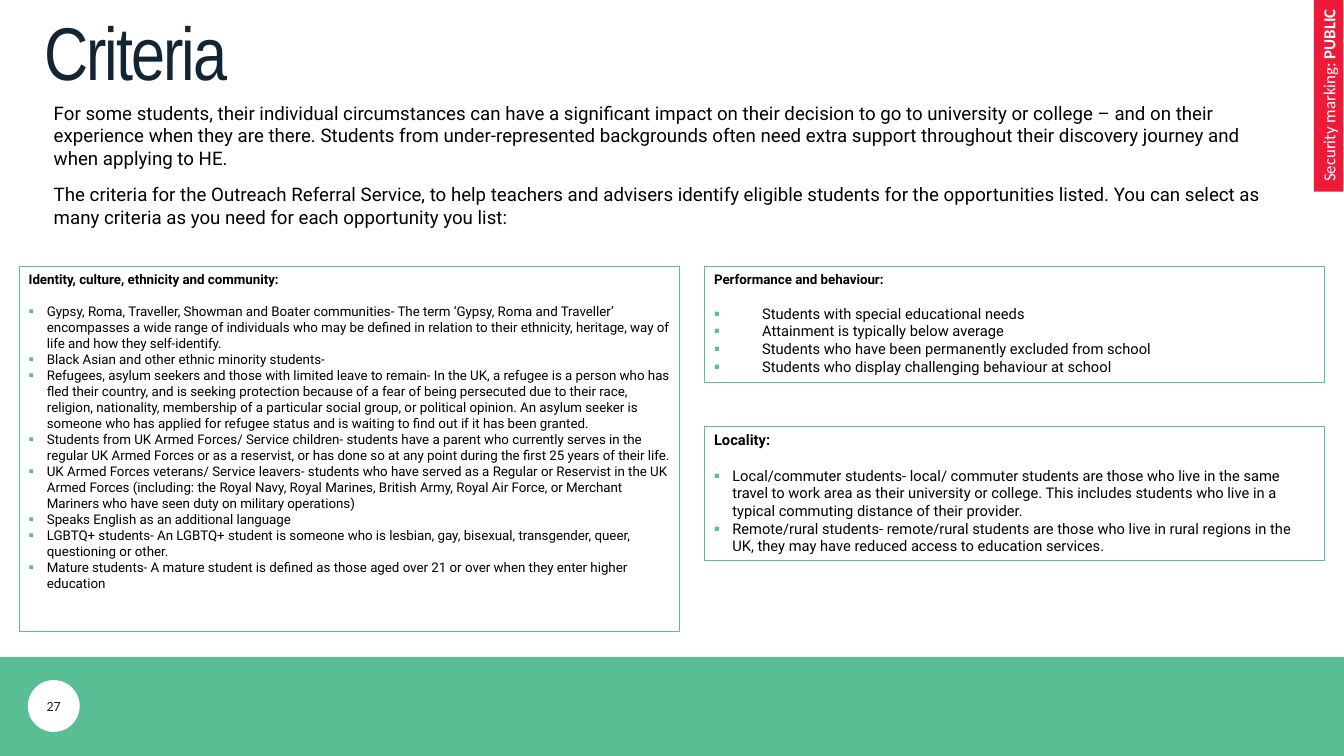
from lxml.etree import SubElement
from pptx import Presentation
from pptx.dml.color import RGBColor
from pptx.enum.shapes import MSO_SHAPE
from pptx.enum.text import MSO_ANCHOR, MSO_AUTO_SIZE, PP_ALIGN
from pptx.oxml.ns import qn
from pptx.util import Inches, Pt

GREEN, RED, NAVY, WHITE, BLACK = "57BF93", "ED1A3A", "132433", "FFFFFF", "000000"

INTRO = [
    "For some students, their individual circumstances can have a significant impact on their decision to go to "
    "university or college – and on their experience when they are there. Students from under-represented "
    "backgrounds often need extra support throughout their discovery journey and when applying to HE.",
    "The criteria for the Outreach Referral Service, to help teachers and advisers identify eligible students for "
    "the opportunities listed. You can select as many criteria as you need for each opportunity you list:",
]
IDENTITY = [
    "Gypsy, Roma, Traveller, Showman and Boater communities- The term ‘Gypsy, Roma and Traveller’ encompasses a "
    "wide range of individuals who may be defined in relation to their ethnicity, heritage, way of life and how "
    "they self-identify.",
    "Black Asian and other ethnic minority students-",
    "Refugees, asylum seekers and those with limited leave to remain- In the UK, a refugee is a person who has fled "
    "their country, and is seeking protection because of a fear of being persecuted due to their race, religion, "
    "nationality, membership of a particular social group, or political opinion. An asylum seeker is someone who "
    "has applied for refugee status and is waiting to find out if it has been granted.",
    "Students from UK Armed Forces/ Service children- students have a parent who currently serves in the regular UK "
    "Armed Forces or as a reservist, or has done so at any point during the first 25 years of their life.",
    "UK Armed Forces veterans/ Service leavers- students who have served as a Regular or Reservist in the UK Armed "
    "Forces (including: the Royal Navy, Royal Marines, British Army, Royal Air Force, or Merchant Mariners who have "
    "seen duty on military operations)",
    "Speaks English as an additional language",
    "LGBTQ+ students- An LGBTQ+ student is someone who is lesbian, gay, bisexual, transgender, queer, questioning "
    "or other.",
    "Mature students- A mature student is defined as those aged over 21 or over when they enter higher education",
]
PERFORMANCE = [
    "Students with special educational needs",
    "Attainment is typically below average",
    "Students who have been permanently excluded from school",
    "Students who display challenging behaviour at school",
]
LOCALITY = [
    "Local/commuter students- local/ commuter students are those who live in the same travel to work area as their "
    "university or college. This includes students who live in a typical commuting distance of their provider.",
    "Remote/rural students- remote/rural students are those who live in rural regions in the UK, they may have "
    "reduced access to education services.",
]


def color(value):
    return RGBColor.from_string(value)


def place(shape, left, top, width, height):
    shape.left, shape.top = Inches(left), Inches(top)
    shape.width, shape.height = Inches(width), Inches(height)


def set_margins(frame, margin):
    frame.margin_left = frame.margin_right = Inches(margin)
    frame.margin_top = frame.margin_bottom = Inches(margin)


def add_run(paragraph, text, size, font="Roboto", text_color=BLACK, bold=False):
    run = paragraph.add_run()
    run.text = text
    run.font.name, run.font.size, run.font.bold = font, Pt(size), bold
    run.font.color.rgb = color(text_color)
    return run


def set_bullet(paragraph, indent=0, character=None):
    properties = paragraph._p.get_or_add_pPr()
    properties.set("marL", str(Inches(indent)))
    properties.set("indent", str(-Inches(indent)))
    if character is None:
        SubElement(properties, qn("a:buNone"))
        return
    bullet_color = SubElement(properties, qn("a:buClr"))
    SubElement(bullet_color, qn("a:srgbClr"), val=GREEN)
    SubElement(properties, qn("a:buFont"), typeface="Roboto")
    SubElement(properties, qn("a:buChar"), char=character)


def add_block(slide, kind, box, fill=None, line=None):
    shape = slide.shapes.add_shape(kind, *map(Inches, box))
    shape.shadow.inherit = False
    if fill:
        shape.fill.solid()
        shape.fill.fore_color.rgb = color(fill)
    else:
        shape.fill.background()
    if line:
        shape.line.color.rgb = color(line)
        shape.line.width = Pt(0.75)
    else:
        shape.line.fill.background()
    return shape


def fill_title(title, text):
    place(title, 0.46, 0.15, 12.78, 0.86)
    frame = title.text_frame
    set_margins(frame, 0)
    frame.auto_size, frame.word_wrap = MSO_AUTO_SIZE.NONE, False
    frame.vertical_anchor = MSO_ANCHOR.BOTTOM
    paragraph = frame.paragraphs[0]
    paragraph.alignment, paragraph.line_spacing = PP_ALIGN.LEFT, 0.9
    run = add_run(paragraph, text, 56, "Arial Narrow", NAVY)
    run._r.get_or_add_rPr().set("spc", "-150")


def fill_intro(body, texts):
    place(body, 0.46, 1.01, 12.78, 1.41)
    frame = body.text_frame
    frame.auto_size, frame.vertical_anchor = MSO_AUTO_SIZE.NONE, MSO_ANCHOR.TOP
    for index, text in enumerate(texts):
        paragraph = frame.add_paragraph() if index else frame.paragraphs[0]
        paragraph.space_before = Pt(10.5 if index else 0)
        set_bullet(paragraph)
        add_run(paragraph, text, 14)


def add_criteria_box(slide, box, heading, items, heading_size, item_size, indent=0.19):
    shape = add_block(slide, MSO_SHAPE.RECTANGLE, box, line=GREEN)
    frame = shape.text_frame
    frame.word_wrap, frame.vertical_anchor = True, MSO_ANCHOR.TOP
    paragraph = frame.paragraphs[0]
    paragraph.alignment = PP_ALIGN.LEFT
    paragraph.space_after = Pt(item_size * 1.2)  # one line of air under the heading
    add_run(paragraph, heading, heading_size, bold=True)
    for item in items:
        paragraph = frame.add_paragraph()
        paragraph.alignment = PP_ALIGN.LEFT
        set_bullet(paragraph, indent, "▪")
        add_run(paragraph, item, item_size)


def add_footer(slide, number):
    add_block(slide, MSO_SHAPE.RECTANGLE, (0, 6.84, 14, 1.03), GREEN)
    badge = add_block(slide, MSO_SHAPE.OVAL, (0.29, 7.08, 0.54, 0.54), WHITE)
    frame = badge.text_frame
    set_margins(frame, 0.08)
    frame.word_wrap, frame.vertical_anchor = False, MSO_ANCHOR.MIDDLE
    frame.paragraphs[0].alignment = PP_ALIGN.CENTER
    add_run(frame.paragraphs[0], number, 10.5, "Calibri", NAVY)


def add_security_tab(slide):
    tab = add_block(slide, MSO_SHAPE.RECTANGLE, (12.84, 0.84, 2, 0.31), RED)
    tab.rotation = 270
    frame = tab.text_frame
    frame.word_wrap = False
    paragraph = frame.paragraphs[0]
    paragraph.alignment = PP_ALIGN.CENTER
    add_run(paragraph, "Security marking: ", 12.6, "Calibri", WHITE)
    add_run(paragraph, "PUBLIC", 12.6, "Calibri", WHITE, bold=True)


def main():
    presentation = Presentation()
    presentation.slide_width, presentation.slide_height = Inches(14), Inches(7.87)
    slide = presentation.slides.add_slide(presentation.slide_layouts[1])

    # Footer and security marking
    add_footer(slide, "27")
    add_security_tab(slide)

    # Title and introduction
    fill_title(slide.shapes.title, "Criteria")
    fill_intro(slide.placeholders[1], INTRO)

    # Criteria groups
    add_criteria_box(slide, (0.2, 2.77, 6.88, 3.8), "Identity, culture, ethnicity and community:", IDENTITY, 10, 10)
    add_criteria_box(slide, (7.34, 2.77, 6.46, 1.21), "Performance and behaviour:", PERFORMANCE, 10, 11, 0.5)
    add_criteria_box(slide, (7.34, 4.44, 6.46, 1.4), "Locality:", LOCALITY, 11, 11)

    presentation.save("out.pptx")


if __name__ == "__main__":
    main()
